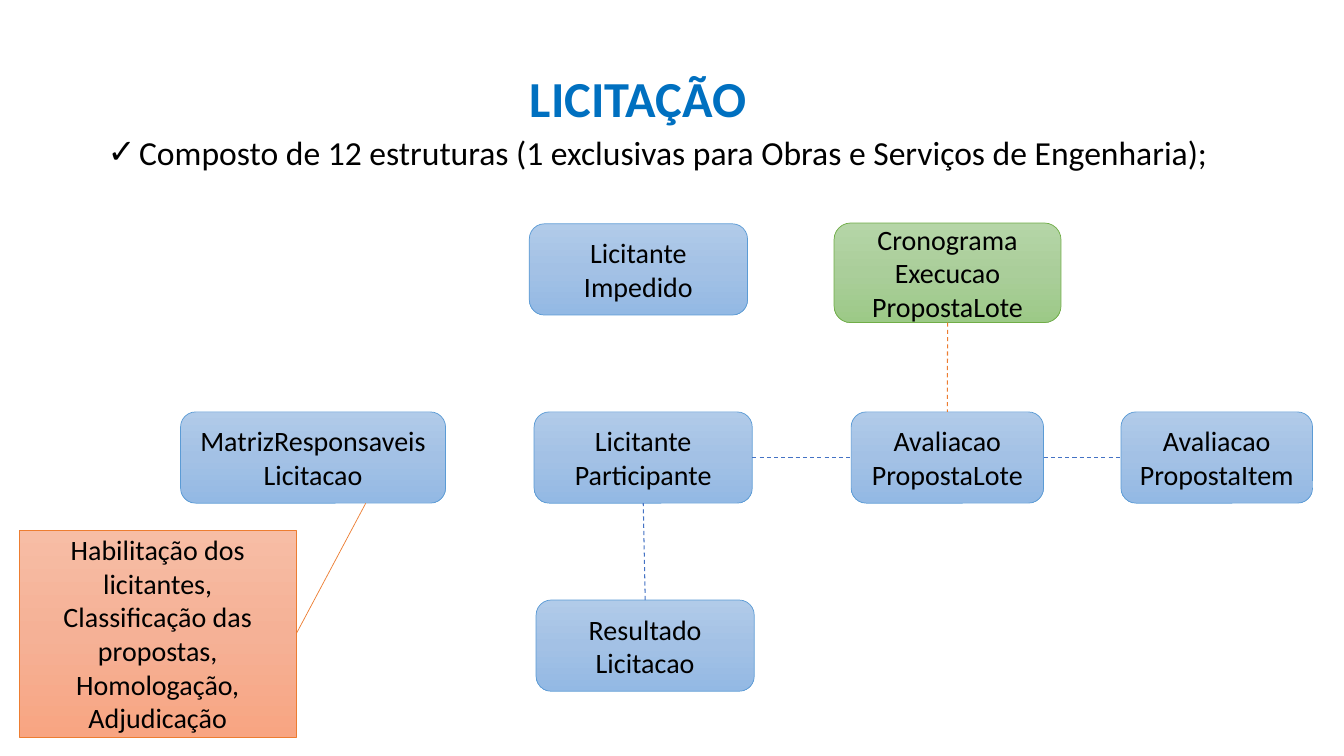
from copy import deepcopy
from dataclasses import dataclass

from lxml import etree
from pptx import Presentation
from pptx.dml.color import RGBColor
from pptx.enum.dml import MSO_LINE
from pptx.enum.shapes import MSO_CONNECTOR, MSO_SHAPE
from pptx.enum.text import MSO_ANCHOR, MSO_AUTO_SIZE, PP_ALIGN
from pptx.oxml.ns import qn
from pptx.util import Cm, Pt

ROUNDED = MSO_SHAPE.ROUNDED_RECTANGLE
CALLOUT = MSO_SHAPE.LINE_CALLOUT_1
STRAIGHT = MSO_CONNECTOR.STRAIGHT
DASH = MSO_LINE.DASH
TOP = MSO_ANCHOR.TOP
MIDDLE = MSO_ANCHOR.MIDDLE
CENTER = PP_ALIGN.CENTER
LEFT = PP_ALIGN.LEFT
NO_FIT = MSO_AUTO_SIZE.NONE
TOP_SITE, LEFT_SITE, BOTTOM_SITE, RIGHT_SITE = range(4)


@dataclass(frozen=True)
class Theme:
    font: str = "Calibri"
    title_size: int = 36
    list_size: int = 24
    box_size: int = 20
    title: str = "0070C0"
    text: str = "000000"
    link: str = "4472C4"
    accent_link: str = "ED7D31"
    blue: tuple = ("B1CBE9", "A3C1E5", "93B9E4", "5B9BD5")
    green: tuple = ("B5D5A7", "AACE9A", "9CC987", "70AD47")
    orange: tuple = ("F7BDA5", "F5B196", "F8A582", "ED7D31")


class SlideBuilder:
    def __init__(self, deck, theme):
        self.theme = theme
        self.page = deck.slides.add_slide(deck.slide_layouts[1])

    def place(self, box, left, top, width, height):
        box.left, box.top = Cm(left), Cm(top)
        box.width, box.height = Cm(width), Cm(height)

    def add_span(self, para, text, size, color, bold=False):
        span = para.add_run()
        span.text = text
        span.font.name = self.theme.font
        span.font.size = Pt(size)
        span.font.bold = bold
        span.font.color.rgb = RGBColor.from_string(color)

    def title(self, text, *area):
        box = self.page.shapes.title
        self.place(box, *area)
        frame = box.text_frame
        frame.auto_size = NO_FIT
        frame.vertical_anchor = TOP
        para = frame.paragraphs[0]
        para.alignment = CENTER
        para.line_spacing = 2.0
        self.add_span(para, text, self.theme.title_size, self.theme.title, True)

    def checklist(self, items, *area):
        box = self.page.placeholders[1]
        self.place(box, *area)
        frame = box.text_frame
        frame.auto_size = NO_FIT
        frame.vertical_anchor = TOP
        for index, item in enumerate(items):
            para = frame.add_paragraph() if index else frame.paragraphs[0]
            para.alignment = LEFT
            para.line_spacing = 1.0
            para.space_before = Pt(0)
            settings = para._p.get_or_add_pPr()
            indent = Cm(0.79)
            settings.set("marL", str(indent))
            settings.set("indent", str(-indent))
            etree.SubElement(settings, qn("a:buFont"), typeface="Arial")
            etree.SubElement(settings, qn("a:buChar"), char="✓")
            self.add_span(para, item, self.theme.list_size, self.theme.text)

    def box(self, lines, palette, *area, kind=ROUNDED):
        box = self.page.shapes.add_shape(kind, *map(Cm, area))
        box.shadow.inherit = False
        self.shade(box, palette[:3])
        box.line.color.rgb = RGBColor.from_string(palette[3])
        box.line.width = Pt(0.5)
        frame = box.text_frame
        frame.word_wrap = True
        frame.vertical_anchor = MIDDLE
        for index, line in enumerate(lines):
            para = frame.add_paragraph() if index else frame.paragraphs[0]
            para.alignment = CENTER
            self.add_span(para, line, self.theme.box_size, self.theme.text)
        return box

    def shade(self, box, colors):
        box.fill.gradient()
        box.fill.gradient_angle = 270
        stops = box._element.spPr.find(qn("a:gradFill")).find(qn("a:gsLst"))
        stops.insert(1, deepcopy(stops[0]))
        for index, stop in enumerate(box.fill.gradient_stops):
            stop.position = index / 2
            stop.color.rgb = RGBColor.from_string(colors[index])

    def callout(self, text, palette, *area, pointer):
        box = self.box([text], palette, *area, kind=CALLOUT)
        for index, value in enumerate(pointer):
            box.adjustments[index] = value

    def link(self, start, start_site, end, end_site, color):
        line = self.page.shapes.add_connector(STRAIGHT, 0, 0, 0, 0)
        line.begin_connect(start, start_site)
        line.end_connect(end, end_site)
        line.line.color.rgb = RGBColor.from_string(color)
        line.line.width = Pt(0.75)
        line.line.dash_style = DASH
        etree.SubElement(line._element.spPr, qn("a:effectLst"))


def main():
    deck = Presentation()
    deck.slide_width, deck.slide_height = Cm(33.87), Cm(19.05)
    theme = Theme()
    page = SlideBuilder(deck, theme)
    page.title("LICITAÇÃO", 5.31, 0.05, 21.54, 2.9)
    page.checklist(
        ["Composto de 12 estruturas (1 exclusivas para Obras e Serviços de Engenharia);"],
        2.46, 3.2, 28.83, 1.27)

    middle, height, wide = 10.38, 2.3, 5.5
    bidder = page.box(["Licitante", "Participante"], theme.blue,
                      13.46, middle, wide, height)
    lot = page.box(["Avaliacao", "PropostaLote"], theme.blue,
                   21.45, middle, 4.85, height)
    item = page.box(["Avaliacao", "PropostaItem"], theme.blue,
                    28.25, middle, 4.83, height)
    page.box(["MatrizResponsaveisLicitacao"], theme.blue,
             4.55, middle, 6.68, height)
    schedule = page.box(["Cronograma", "Execucao", "PropostaLote"], theme.green,
                        21.02, 5.62, 5.72, 2.51)
    result = page.box(["Resultado", "Licitacao"], theme.blue,
                      13.51, 15.12, wide, height)
    page.box(["Licitante", "Impedido"], theme.blue, 13.34, 5.64, wide, height)

    page.link(bidder, RIGHT_SITE, lot, LEFT_SITE, theme.link)
    page.link(lot, RIGHT_SITE, item, LEFT_SITE, theme.link)
    page.link(schedule, BOTTOM_SITE, lot, TOP_SITE, theme.accent_link)
    page.link(result, TOP_SITE, bidder, BOTTOM_SITE, theme.link)

    page.callout(
        "Habilitação dos licitantes, Classificação das propostas, Homologação, Adjudicação",
        theme.orange, 0.48, 13.36, 6.99, 5.21, pointer=(0.5, 1.0, -0.13, 1.25))
    deck.save("out.pptx")


if __name__ == "__main__":
    main()
